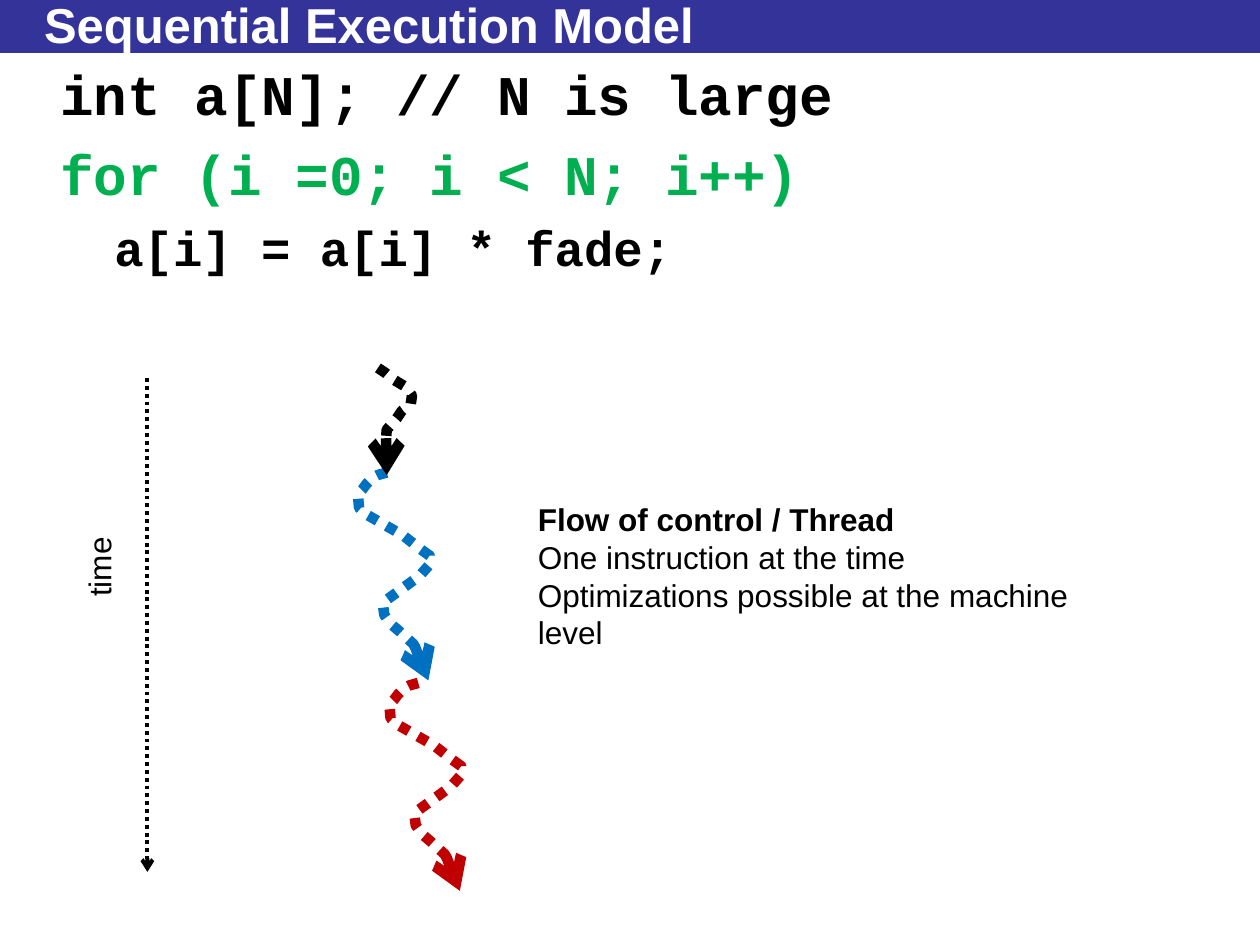
from dataclasses import dataclass

from lxml import etree
from pptx import Presentation
from pptx import util as u
from pptx.dml.color import RGBColor
from pptx.enum import dml, shapes, text
from pptx.oxml.ns import qn


@dataclass(frozen=True)
class Theme:
    band: RGBColor = RGBColor(0x33, 0x33, 0x99)
    white: RGBColor = RGBColor(0xFF, 0xFF, 0xFF)
    black: RGBColor = RGBColor(0, 0, 0)
    green: RGBColor = RGBColor(0x00, 0xB0, 0x50)
    blue: RGBColor = RGBColor(0x00, 0x70, 0xC0)
    red: RGBColor = RGBColor(0xC0, 0x00, 0x00)
    sans: str = "Arial"
    mono: str = "Courier New"
    title: int = 28
    code: int = 32
    code_inner: int = 28
    label: int = 18


THEME = Theme()

FIRST_STEP = [
    (0, 0), (0.06, 0.04), (0.12, 0.09), (0.22, 0.15), (0.27, 0.22),
    (0.26, 0.29), (0.19, 0.34), (0.15, 0.4), (0.07, 0.49), (0.06, 0.62),
    (0.07, 0.85),
]
LOOP_STEP = [
    (0, 0), (-0.07, 0.02), (-0.11, 0.04), (-0.16, 0.09), (-0.19, 0.13),
    (-0.23, 0.17), (-0.22, 0.28), (-0.15, 0.34), (0.13, 0.5), (0.27, 0.61),
    (0.34, 0.66), (0.34, 0.73), (0.27, 0.81), (0.22, 0.85), (0.11, 0.93),
    (0, 1.01), (-0.03, 1.05), (-0.02, 1.13), (0.03, 1.2), (0.1, 1.26),
    (0.21, 1.36), (0.25, 1.43), (0.28, 1.45), (0.33, 1.65),
]


def inches(*lengths):
    return [u.Inches(length) for length in lengths]


def format_paragraph(paragraph, size, color, name=THEME.sans, bold=False):
    font = paragraph.font
    font.size, font.name, font.bold = u.Pt(size), name, bold
    font.color.rgb = color


def style_dotted_arrow(shape, color, width):
    shape.line.color.rgb = color
    shape.line.width = u.Pt(width)
    shape.line.dash_style = dml.MSO_LINE.ROUND_DOT
    outline = shape._element.spPr.find(qn("a:ln"))
    etree.SubElement(outline, qn("a:tailEnd"), type="arrow")


def add_title(slide, left, top, width, height):
    band = slide.shapes.add_shape(
        shapes.MSO_SHAPE.RECTANGLE, *inches(left, top, width, height))
    band.shadow.inherit = False
    band.fill.solid()
    band.fill.fore_color.rgb = THEME.band
    band.line.fill.background()

    title = slide.shapes.title
    title.left, title.top, title.width, title.height = inches(
        left + 0.25, top + 0.05, width - 0.75, 0.28)
    frame = title.text_frame
    frame.text = "Sequential Execution Model"
    frame.auto_size = text.MSO_AUTO_SIZE.NONE
    frame.vertical_anchor = text.MSO_ANCHOR.MIDDLE
    paragraph = frame.paragraphs[0]
    paragraph.alignment = text.PP_ALIGN.LEFT
    format_paragraph(paragraph, THEME.title, THEME.white, bold=True)
    slide.shapes._spTree.append(title._element)


def add_text(slide, box, lines, wrap=False):
    shape = slide.shapes.add_textbox(*inches(*box))
    frame = shape.text_frame
    frame.word_wrap = wrap
    frame.text = "\n".join(lines)
    return shape, frame.paragraphs


def add_code(slide, left, top, width, height):
    lines = [
        ("int a[N]; // N is large", THEME.code, THEME.black, 0.38),
        ("for (i =0; i < N; i++)", THEME.code, THEME.green, 0.38),
        ("a[i] = a[i] * fade;", THEME.code_inner, THEME.black, 0.81),
    ]
    _, paragraphs = add_text(
        slide, (left, top, width, height), [line[0] for line in lines], wrap=True)
    for paragraph, (_, size, color, indent) in zip(paragraphs, lines):
        format_paragraph(paragraph, size, color, THEME.mono, bold=True)
        paragraph.space_before = u.Pt(size * 0.23)
        paragraph._p.get_or_add_pPr().set("marL", str(u.Inches(indent)))


def add_time_axis(slide, left, top, width, height):
    right = left + width
    axis = slide.shapes.add_connector(
        shapes.MSO_CONNECTOR.STRAIGHT, *inches(right, top, right, top + height))
    style_dotted_arrow(axis, THEME.black, 2.25)
    etree.SubElement(axis._element.spPr, qn("a:effectLst"))

    label, paragraphs = add_text(slide, (left, top + 1.3, 0.67, 0.4), ["time"])
    label.rotation = 270
    format_paragraph(paragraphs[0], THEME.label, THEME.black)


def add_thread(slide, left, top):
    steps = [
        (0.07, 0.83, LOOP_STEP, THEME.blue),
        (0.32, 2.5, LOOP_STEP, THEME.red),
        (0, 0, FIRST_STEP, THEME.black),
    ]
    for across, down, offsets, color in steps:
        start, *points = [
            inches(left + across + x, top + down + y) for x, y in offsets]
        builder = slide.shapes.build_freeform(*start)
        builder.add_line_segments(points, close=False)
        squiggle = builder.convert_to_shape()
        squiggle.shadow.inherit = False
        squiggle.fill.background()
        style_dotted_arrow(squiggle, color, 6)


def add_explanation(slide, left, top, width, height):
    _, paragraphs = add_text(slide, (left, top, width, height), [
        "Flow of control / Thread",
        "One instruction at the time",
        "Optimizations possible at the machine level",
    ])
    for index, paragraph in enumerate(paragraphs):
        format_paragraph(paragraph, THEME.label, THEME.black, bold=index == 0)


def main():
    presentation = Presentation()
    presentation.slide_width, presentation.slide_height = inches(10, 7.5)
    slide = presentation.slides.add_slide(presentation.slide_layouts[5])
    add_title(slide, 0, 0, 10, 0.42)
    add_code(slide, 0, 0.42, 10, 7.08)
    add_time_axis(slide, 0.45, 3, 0.72, 3.92)
    add_thread(slide, 3, 2.92)
    add_explanation(slide, 4.17, 3.92, 4.99, 1)
    presentation.save("out.pptx")


if __name__ == "__main__":
    main()
